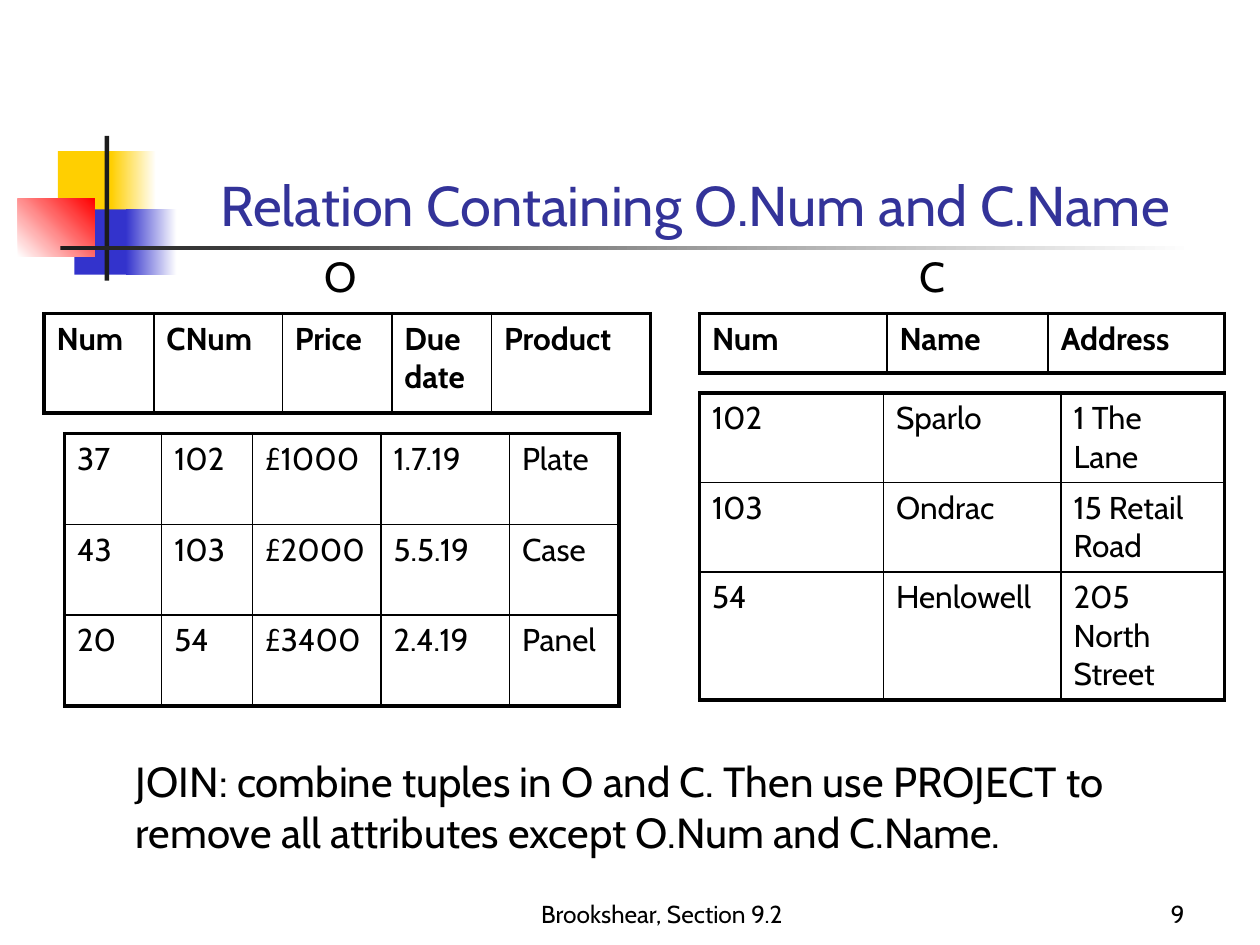
from lxml import etree
from pptx import Presentation
from pptx import util as u
from pptx.dml.color import RGBColor
from pptx.enum import shapes, text
from pptx.oxml import ns

FONT = "Cabin"
BLACK = RGBColor(0x00, 0x00, 0x00)
WHITE = RGBColor(0xFF, 0xFF, 0xFF)
YELLOW = RGBColor(0xFF, 0xCF, 0x01)
BLUE = RGBColor(0x33, 0x33, 0xCC)
RED = RGBColor(0xFF, 0x00, 0x00)
CHARCOAL = RGBColor(0x1C, 0x1C, 0x1C)
INDIGO = RGBColor(0x33, 0x33, 0x99)
THIN, THICK = u.Pt(1), u.Pt(2.25)

# Left, top, width, height in cm; start colour, end colour, angle
DECORATION = [
    ((1.17, 3.05, 1.22, 1.32), YELLOW, None, 0),
    ((2.24, 3.05, 0.91, 1.32), YELLOW, WHITE, 0),
    ((1.5, 4.22, 1.17, 1.32), BLUE, None, 0),
    ((2.54, 4.22, 1.02, 1.32), BLUE, WHITE, 0),
    ((0.36, 4.01, 1.55, 1.17), WHITE, RED, 45),
    ((2.11, 2.74, 0.09, 2.92), CHARCOAL, None, 0),
    ((1.22, 4.95, 22.86, 0.09), CHARCOAL, WHITE, 0),
]

# Left, top, column widths, row heights in cm; bold; rows
TABLES = [
    (1.3, 8.74, [1.96, 1.83, 2.59, 2.59, 2.21], [1.83] * 3, False,
     [["37", "102", "£1000", "1.7.19", "Plate"],
      ["43", "103", "£2000", "5.5.19", "Case"],
      ["20", "54", "£3400", "2.4.19", "Panel"]]),
    (14.1, 7.92, [3.71, 3.58, 3.3], [1.78, 1.78, 2.54], False,
     [["102", "Sparlo", "1 The Lane"],
      ["103", "Ondrac", "15 Retail Road"],
      ["54", "Henlowell", "205 North Street"]]),
    (0.89, 6.32, [2.21, 2.59, 2.21, 2.01, 3.2], [2.01], True,
     [["Num", "CNum", "Price", "Due date", "Product"]]),
    (14.1, 6.32, [3.78, 3.25, 3.56], [1.2], True,
     [["Num", "Name", "Address"]]),
]


def style_paragraph(paragraph, size, color=BLACK, align=text.PP_ALIGN.LEFT, bold=False):
    paragraph.alignment = align
    font = paragraph.font
    font.name, font.size, font.bold = FONT, u.Pt(size), bold
    font.color.rgb = color


def add_block(slide, box, start, end, angle):
    """Plain or fading rectangle of the corner ornament."""
    shape = slide.shapes.add_shape(shapes.MSO_SHAPE.RECTANGLE, *map(u.Cm, box))
    shape.shadow.inherit = False
    shape.line.fill.background()
    if end is None:
        shape.fill.solid()
        shape.fill.fore_color.rgb = start
        return
    shape.fill.gradient()
    shape.fill.gradient_angle = angle
    for stop, color in zip(shape.fill.gradient_stops, (start, end)):
        stop.color.rgb = color


def add_text(slide, box, lines, size, align=text.PP_ALIGN.LEFT,
             anchor=text.MSO_ANCHOR.TOP):
    frame = slide.shapes.add_textbox(*map(u.Cm, box)).text_frame
    frame.word_wrap = True
    frame.vertical_anchor = anchor
    frame.text = "\n".join(lines)
    for paragraph in frame.paragraphs:
        style_paragraph(paragraph, size, align=align)


def set_borders(cell, widths):
    """Black borders; widths in the order left, right, top, bottom."""
    properties = cell._tc.get_or_add_tcPr()
    for index, (side, width) in enumerate(zip("LRTB", widths)):
        line = etree.Element(ns.qn(f"a:ln{side}"), w=str(width))
        fill = etree.SubElement(line, ns.qn("a:solidFill"))
        etree.SubElement(fill, ns.qn("a:srgbClr"), val=str(BLACK))
        properties.insert(index, line)


def add_grid(slide, left, top, columns, heights, bold, rows):
    """Table with a thick frame and thin inner lines."""
    table = slide.shapes.add_table(
        len(rows), len(columns), u.Cm(left), u.Cm(top),
        u.Cm(sum(columns)), u.Cm(sum(heights))).table
    table.first_row = table.horz_banding = False
    for column, width in zip(table.columns, columns):
        column.width = u.Cm(width)
    for row, height in zip(table.rows, heights):
        row.height = u.Cm(height)
    last_row, last_column = len(rows) - 1, len(columns) - 1
    for r, values in enumerate(rows):
        for c, value in enumerate(values):
            cell = table.cell(r, c)
            cell.text = value
            cell.fill.background()
            style_paragraph(cell.text_frame.paragraphs[0], 18, bold=bold)
            outer = (c == 0, c == last_column, r == 0, r == last_row)
            set_borders(cell, [THICK if edge else THIN for edge in outer])


def set_title(slide, wording):
    title = slide.shapes.title
    title.left, title.top, title.width, title.height = map(
        u.Cm, (3.2, 1.73, 21.64, 3.18))
    frame = title.text_frame
    frame.text = wording
    frame.auto_size = text.MSO_AUTO_SIZE.NONE
    frame.vertical_anchor = text.MSO_ANCHOR.BOTTOM
    style_paragraph(frame.paragraphs[0], 32, INDIGO, text.PP_ALIGN.CENTER)


def main():
    presentation = Presentation()
    presentation.slide_width, presentation.slide_height = u.Cm(25.4), u.Cm(19.05)
    slide = presentation.slides.add_slide(presentation.slide_layouts[5])

    # Ornament and title
    for block in DECORATION:
        add_block(slide, *block)
    set_title(slide, "Relation Containing O.Num and C.Name")

    # Relations with their labels
    for grid in TABLES:
        add_grid(slide, *grid)
    for label, left in (("O", 6.3), ("C", 18.29)):
        add_text(slide, (left, 4.93, 1.2, 1.27), [label], 24)

    # Explanation
    add_text(slide, (2.49, 15.11, 21.44, 2.29),
             ["JOIN: combine tuples in O and C. Then use PROJECT to",
              "remove all attributes except O.Num and C.Name."], 24)

    # Footer
    bottom = text.MSO_ANCHOR.BOTTOM
    add_text(slide, (9.32, 17.58, 8.05, 1.27), ["Brookshear, Section 9.2"], 14,
             text.PP_ALIGN.CENTER, bottom)
    add_text(slide, (18.85, 17.58, 5.28, 1.27), ["9"], 14,
             text.PP_ALIGN.RIGHT, bottom)

    presentation.save("out.pptx")


main()
